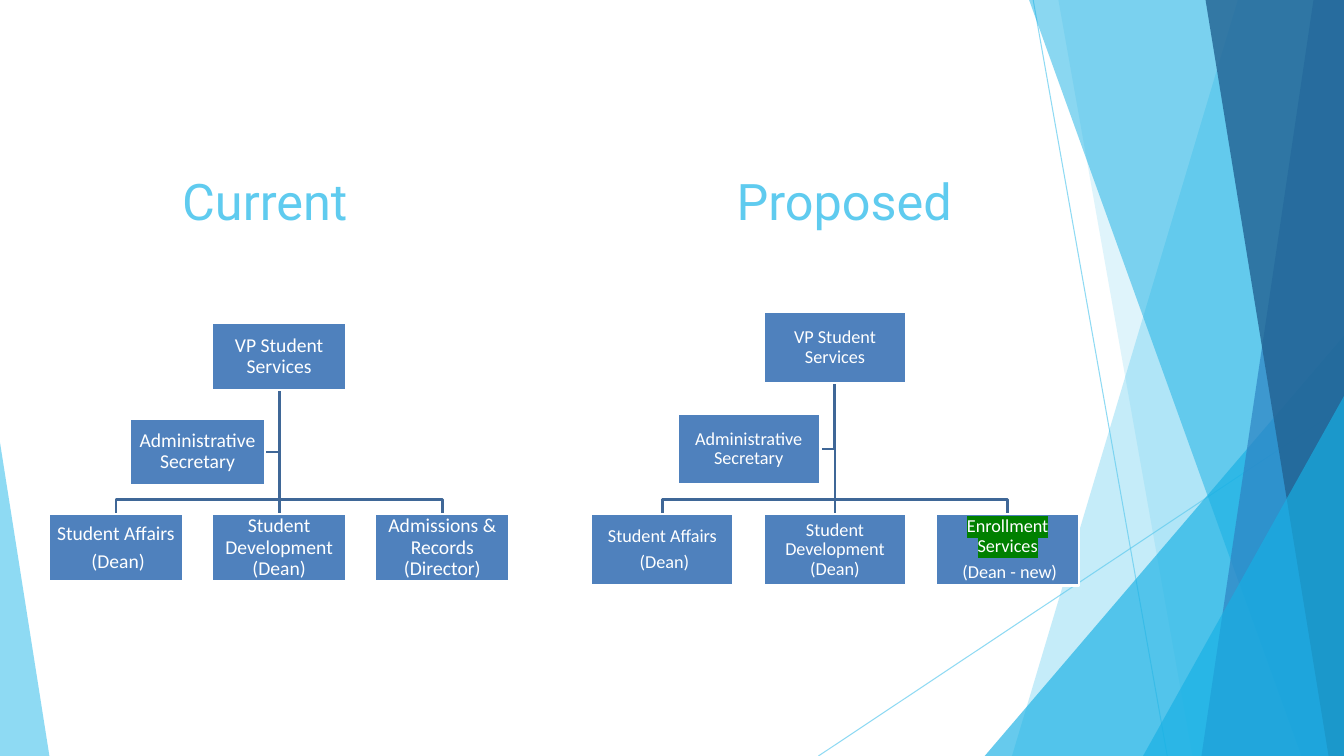
"""Build a slide comparing the current and proposed student services structure."""
import pptx
import pptx.dml.color
import pptx.enum.shapes
import pptx.enum.text
import pptx.oxml.ns
import pptx.util
from lxml import etree

Pt = pptx.util.Pt
qn = pptx.oxml.ns.qn
WIDTH, HEIGHT = 960, 540
COLOURS = {
    "sky": "5FCBEF", "cyan": "17B0E4", "blue": "2E83C3", "navy": "226292",
    "node": "4F81BD", "branch": "3F6797", "white": "FFFFFF", "green": "008000",
}


def rgb(name):
    """Return a named colour."""
    return pptx.dml.color.RGBColor.from_string(COLOURS[name])


def set_alpha(shape, percent):
    """Make the colours of a shape partly transparent."""
    for colour in shape._element.spPr.iter(qn("a:srgbClr")):
        etree.SubElement(colour, qn("a:alpha"), val=str(percent * 1000))


def paint(shape, colour, alpha):
    """Give a decorative shape a transparent fill and no line."""
    shape.shadow.inherit = False
    shape.fill.solid()
    shape.fill.fore_color.rgb = rgb(colour)
    shape.line.fill.background()
    set_alpha(shape, alpha)


def add_line(slide, start, end, colour, width):
    """Draw a straight line between two points."""
    line = slide.shapes.add_connector(
        pptx.enum.shapes.MSO_CONNECTOR.STRAIGHT, *map(Pt, start + end))
    line.line.color.rgb = rgb(colour)
    line.line.width = Pt(width)
    etree.SubElement(line._element.spPr, qn("a:effectLst"))
    return line


def add_path(slide, points, close):
    """Draw a freeform through the given points."""
    points = [tuple(map(Pt, point)) for point in points]
    builder = slide.shapes.build_freeform(*points[0])
    builder.add_line_segments(points[1:], close=close)
    return builder.convert_to_shape()


def add_band(slide, top_x, bottom_x, colour, alpha):
    """Fill the area from a slanted edge to the right side of the slide."""
    points = [(top_x, 0), (WIDTH, 0), (WIDTH, HEIGHT), (bottom_x, HEIGHT)]
    paint(add_path(slide, points, True), colour, alpha)


def add_triangle(slide, left, top, width, apex, colour, alpha):
    """Stand a right-angled triangle on the bottom of the slide."""
    triangle = slide.shapes.add_shape(
        pptx.enum.shapes.MSO_SHAPE.ISOSCELES_TRIANGLE,
        Pt(left), Pt(top), Pt(width), Pt(HEIGHT - top))
    triangle.adjustments[0] = apex
    paint(triangle, colour, alpha)


def add_decoration(slide):
    """Draw the translucent facets at the sides of the slide."""
    for start, end in (((738, 0), (833.8, HEIGHT)), ((WIDTH, 290.2), (584.6, HEIGHT))):
        set_alpha(add_line(slide, start, end, "sky", 0.75), 70)
    add_band(slide, 884.2, 722.9, "sky", 36)
    add_band(slide, 756, 851.8, "sky", 20)
    add_triangle(slide, 703.4, 239.8, 256.6, 1, "cyan", 66)
    add_band(slide, 735.1, 929.5, "cyan", 50)
    add_band(slide, 938.2, 858.2, "blue", 70)
    add_band(slide, 861.1, 949, "navy", 80)
    add_triangle(slide, 816.5, 283, 143.5, 1, "cyan", 66)
    add_triangle(slide, 0, 316.1, 35.3, 0, "sky", 70)


def style_span(span, font, size, colour):
    """Set the font of a run."""
    span.font.name = font
    span.font.size = Pt(size)
    span.font.color.rgb = rgb(colour)


def highlight(span, colour):
    """Mark the background of a run."""
    mark = etree.Element(qn("a:highlight"))
    etree.SubElement(mark, qn("a:srgbClr"), val=COLOURS[colour])
    span._r.rPr.find(qn("a:solidFill")).addnext(mark)


def add_title(slide, text, stop):
    """Add the heading, with one tab stop before its second word."""
    box = slide.shapes.add_textbox(Pt(123.1), Pt(115.9), Pt(614.9), Pt(54))
    frame = box.text_frame
    frame.word_wrap = True
    frame.vertical_anchor = pptx.enum.text.MSO_ANCHOR.MIDDLE
    para = frame.paragraphs[0]
    para.text = text
    tabs = etree.SubElement(para._p.get_or_add_pPr(), qn("a:tabLst"))
    etree.SubElement(tabs, qn("a:tab"), pos=str(Pt(stop)), algn="l")
    for span in para.runs:
        style_span(span, "Roboto", 36, "sky")


def add_node(slide, left, top, width, height, text, size):
    """Add one position of the organisation chart."""
    box = slide.shapes.add_shape(
        pptx.enum.shapes.MSO_SHAPE.RECTANGLE, Pt(left), Pt(top), Pt(width), Pt(height))
    box.shadow.inherit = False
    box.fill.solid()
    box.fill.fore_color.rgb = rgb("node")
    box.line.color.rgb = rgb("white")
    box.line.width = Pt(2)
    frame = box.text_frame
    frame.word_wrap = True
    frame.vertical_anchor = pptx.enum.text.MSO_ANCHOR.MIDDLE
    frame.margin_left = frame.margin_right = Pt(0.7)
    frame.margin_top = frame.margin_bottom = Pt(0.7)
    frame.text = text
    for para in frame.paragraphs:
        para.alignment = pptx.enum.text.PP_ALIGN.CENTER
        para.line_spacing = 0.9
        para.space_after = Pt(0.35 * size)
        for span in para.runs:
            style_span(span, "Calibri", size, "white")
    return box


def add_branch(slide, points):
    """Draw an angled line between two positions."""
    branch = add_path(slide, points, False)
    branch.shadow.inherit = False
    branch.fill.background()
    branch.line.color.rgb = rgb("branch")
    branch.line.width = Pt(2)


def add_chart(slide, centre, root_top, assistant_top, width, height, pitch, size, reports):
    """Draw a head, an assistant and a row of reports, and return the report boxes."""
    root_bottom, row_top, bus = root_top + height, 367.2, 357.1
    assistant_left = centre - width / 2 - pitch / 2
    assistant_middle = assistant_top + height / 2
    add_branch(slide, [(centre, root_bottom), (centre, assistant_middle),
                       (assistant_left + width, assistant_middle)])
    for x in (centre + pitch, centre - pitch):
        add_branch(slide, [(centre, root_bottom), (centre, bus), (x, bus), (x, row_top)])
    add_line(slide, (centre, root_bottom), (centre, row_top), "branch", 2)
    add_node(slide, centre - width / 2, root_top, width, height,
             "VP Student Services", size)
    add_node(slide, assistant_left, assistant_top, width, height,
             "Administrative Secretary", size)
    return [add_node(slide, centre - width / 2 + step * pitch, row_top,
                     width, height, text, size)
            for step, text in enumerate(reports, -1)]


def main():
    """Build and save the slide."""
    deck = pptx.Presentation()
    deck.slide_width, deck.slide_height = Pt(WIDTH), Pt(HEIGHT)
    slide = deck.slides.add_slide(deck.slide_layouts[6])
    add_decoration(slide)
    add_title(slide, "Current\tProposed", 396)
    shared = ["Student Affairs\n (Dean)", "Student Development (Dean)"]
    add_chart(slide, 199.4, 230.4, 298.8, 96.4, 48.2, 116.6, 14,
              shared + ["Admissions & Records (Director)"])
    boxes = add_chart(slide, 596.4, 222.5, 295.2, 102.2, 51.1, 123.3, 13,
                      shared + ["Enrollment Services\n (Dean - new)"])
    highlight(boxes[-1].text_frame.paragraphs[0].runs[0], "green")
    deck.save("out.pptx")


if __name__ == "__main__":
    main()
